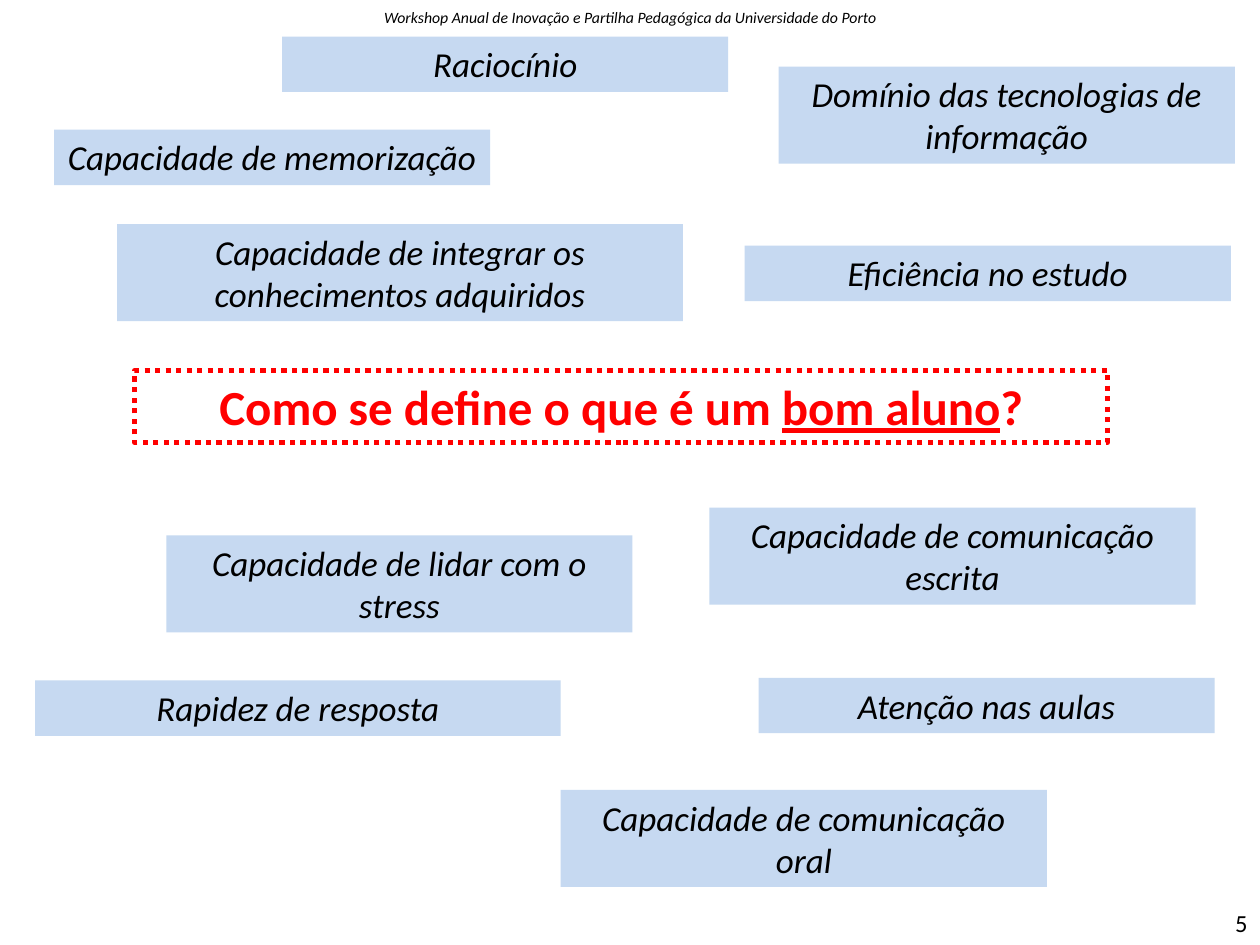
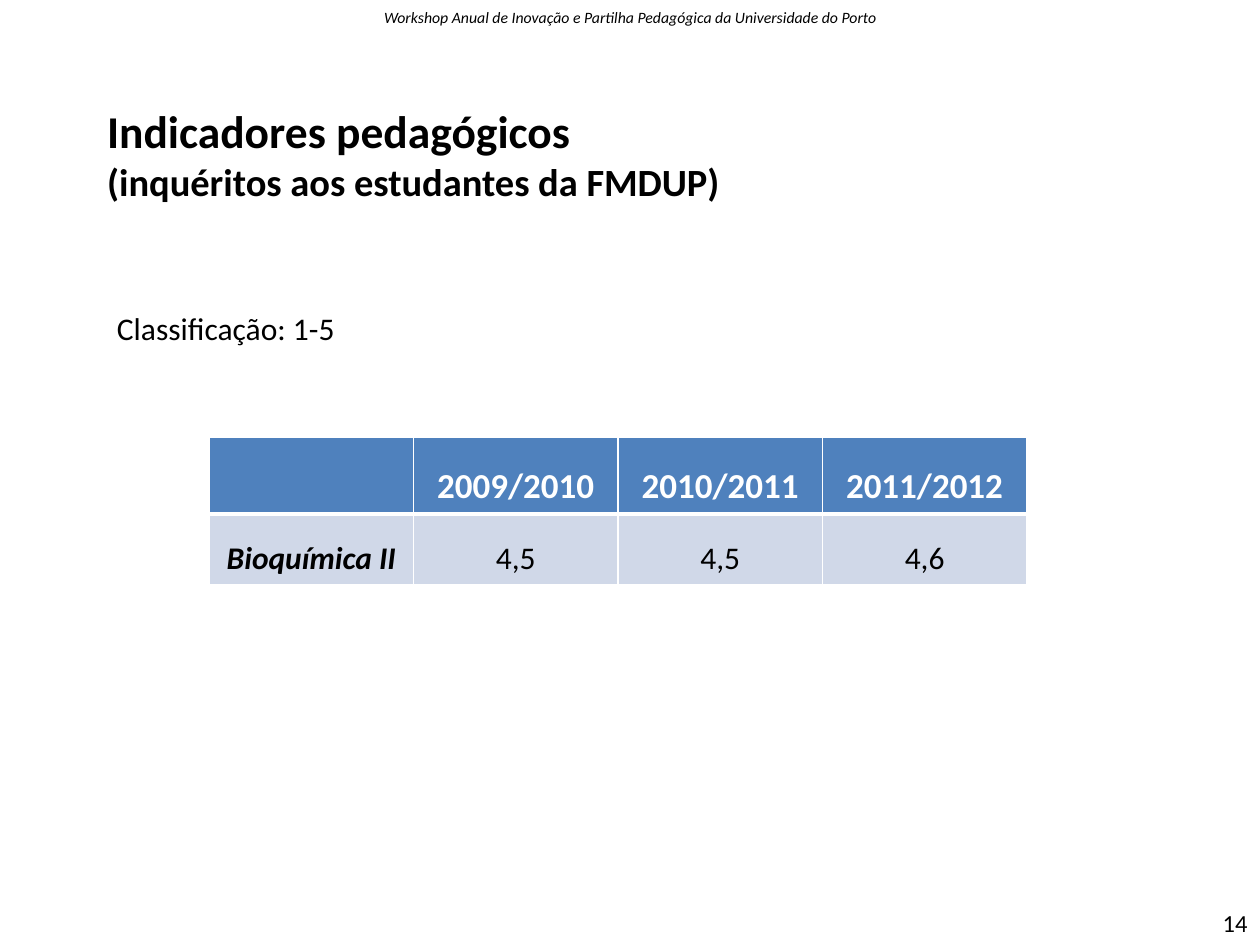
from lxml import etree
from pptx import Presentation
from pptx.dml.color import RGBColor
from pptx.enum import dml, shapes, text
from pptx.oxml import ns
from pptx.util import Inches, Pt

COLORS = {
    "black": "000000",
    "white": "FFFFFF",
    "question": "FF0000",
    "skill": "C6D9F1",
    "table_header": "4F81BD",
    "table_body": "D0D8E8",
}
FONT = "Calibri"
HEADER = "Workshop Anual de Inovação e Partilha Pedagógica da Universidade do Porto"
TITLE_ONLY = 5

SKILLS = [
    ("Capacidade de memorização", 0.43, 1.03, 3.46, 0.44),
    ("Raciocínio", 2.24, 0.29, 3.54, 0.44),
    ("Domínio das tecnologias de informação", 6.18, 0.53, 3.62, 0.77),
    ("Capacidade de comunicação escrita", 5.63, 4.03, 3.86, 0.77),
    ("Capacidade de comunicação oral", 4.45, 6.27, 3.86, 0.77),
    ("Rapidez de resposta", 0.28, 5.4, 4.17, 0.44),
    ("Eficiência no estudo", 5.91, 1.95, 3.86, 0.44),
    ("Capacidade de integrar os conhecimentos adquiridos", 0.93, 1.78, 4.49, 0.77),
    ("Atenção nas aulas", 6.02, 5.38, 3.62, 0.44),
    ("Capacidade de lidar com o stress", 1.32, 4.25, 3.7, 0.77),
]
RATINGS = [
    ["", "2009/2010", "2010/2011", "2011/2012"],
    ["Bioquímica II", "4,5", "4,5", "4,6"],
]


def color(name):
    return RGBColor.from_string(COLORS[name])


def inches(box):
    return [Inches(length) for length in box]


def format_paragraph(paragraph, size, ink="black", bold=False, italic=False,
                     align=text.PP_ALIGN.LEFT):
    paragraph.alignment = align
    for run in paragraph.runs:
        font = run.font
        font.name, font.size, font.bold, font.italic = FONT, Pt(size), bold, italic
        font.color.rgb = color(ink)


def write(shape, content, size, **style):
    frame = shape.text_frame
    frame.word_wrap = True
    frame.auto_size = text.MSO_AUTO_SIZE.NONE
    frame.vertical_anchor = text.MSO_ANCHOR.TOP
    frame.text = content
    for paragraph in frame.paragraphs:
        format_paragraph(paragraph, size, **style)


def add_text(slide, box, content, size, **style):
    write(slide.shapes.add_textbox(*inches(box)), content, size, **style)


def place_title(slide, box, content, size, **style):
    title = slide.shapes.title
    title.left, title.top, title.width, title.height = inches(box)
    write(title, content, size, bold=True, **style)
    return title


def add_slide(presentation, number):
    slide = presentation.slides.add_slide(presentation.slide_layouts[TITLE_ONLY])
    add_text(slide, (0, 0.01, 10, 0.25), HEADER, 9, italic=True,
             align=text.PP_ALIGN.CENTER)
    add_text(slide, (7.67, 7.16, 2.33, 0.4), str(number), 14,
             align=text.PP_ALIGN.RIGHT)
    return slide


def add_skill(slide, box, label):
    shape = slide.shapes.add_shape(shapes.MSO_SHAPE.RECTANGLE, *inches(box))
    shape.shadow.inherit = False
    shape.fill.solid()
    shape.fill.fore_color.rgb = color("skill")
    shape.line.fill.background()
    write(shape, label, 20, italic=True, align=text.PP_ALIGN.CENTER)


def add_question(slide, box):
    style = {"ink": "question", "align": text.PP_ALIGN.CENTER}
    title = place_title(slide, box, "Como se define o que é um ", 28, **style)
    title.line.color.rgb = color("question")
    title.line.width = Pt(3)
    title.line.dash_style = dml.MSO_LINE.ROUND_DOT
    paragraph = title.text_frame.paragraphs[0]
    subject = paragraph.add_run()
    subject.text = "bom aluno"
    paragraph.add_run().text = "?"
    format_paragraph(paragraph, 28, bold=True, **style)
    subject.font.underline = True


def add_borders(cell, widths):
    properties = cell._tc.get_or_add_tcPr()
    for side, width in zip("LRTB", widths):
        line = etree.SubElement(properties, ns.qn(f"a:ln{side}"), w=str(Pt(width)))
        fill = etree.SubElement(line, ns.qn("a:solidFill"))
        etree.SubElement(fill, ns.qn("a:srgbClr"), val=COLORS["white"])


def add_ratings(slide, box):
    frame = slide.shapes.add_table(len(RATINGS), len(RATINGS[0]), *inches(box))
    table = frame.table
    for row, height in zip(table.rows, (0.6, 0.55)):
        row.height = Inches(height)
    for row, values in enumerate(RATINGS):
        header = row == 0
        for column, value in enumerate(values):
            cell = table.cell(row, column)
            add_borders(cell, (1, 1, 1, 3) if header else (1, 1, 3, 1))
            cell.fill.solid()
            cell.fill.fore_color.rgb = color("table_header" if header else "table_body")
            cell.text = value
            paragraph = cell.text_frame.paragraphs[0]
            paragraph.line_spacing = 1.5
            row_name = not header and column == 0
            format_paragraph(paragraph, 20 if header else 18,
                             ink="white" if header else "black",
                             bold=header or row_name, italic=row_name,
                             align=text.PP_ALIGN.CENTER)


def build_question_slide(presentation):
    slide = add_slide(presentation, 5)
    add_question(slide, (1.07, 2.94, 7.72, 0.57))
    for label, *box in SKILLS:
        add_skill(slide, box, label)


def build_indicators_slide(presentation):
    slide = add_slide(presentation, 14)
    title = place_title(slide, (0.75, 0.77, 8.27, 0.91),
                        "Indicadores pedagógicos\n(inquéritos aos estudantes da FMDUP)", 26)
    format_paragraph(title.text_frame.paragraphs[1], 22, bold=True)
    add_text(slide, (0.83, 2.4, 5.75, 0.4), "Classificação: 1-5", 18)
    add_ratings(slide, (1.66, 3.47, 6.49, 1.15))


def main():
    presentation = Presentation()
    presentation.slide_width, presentation.slide_height = Inches(10), Inches(7.5)
    build_question_slide(presentation)
    build_indicators_slide(presentation)
    presentation.save("out.pptx")


if __name__ == "__main__":
    main()
